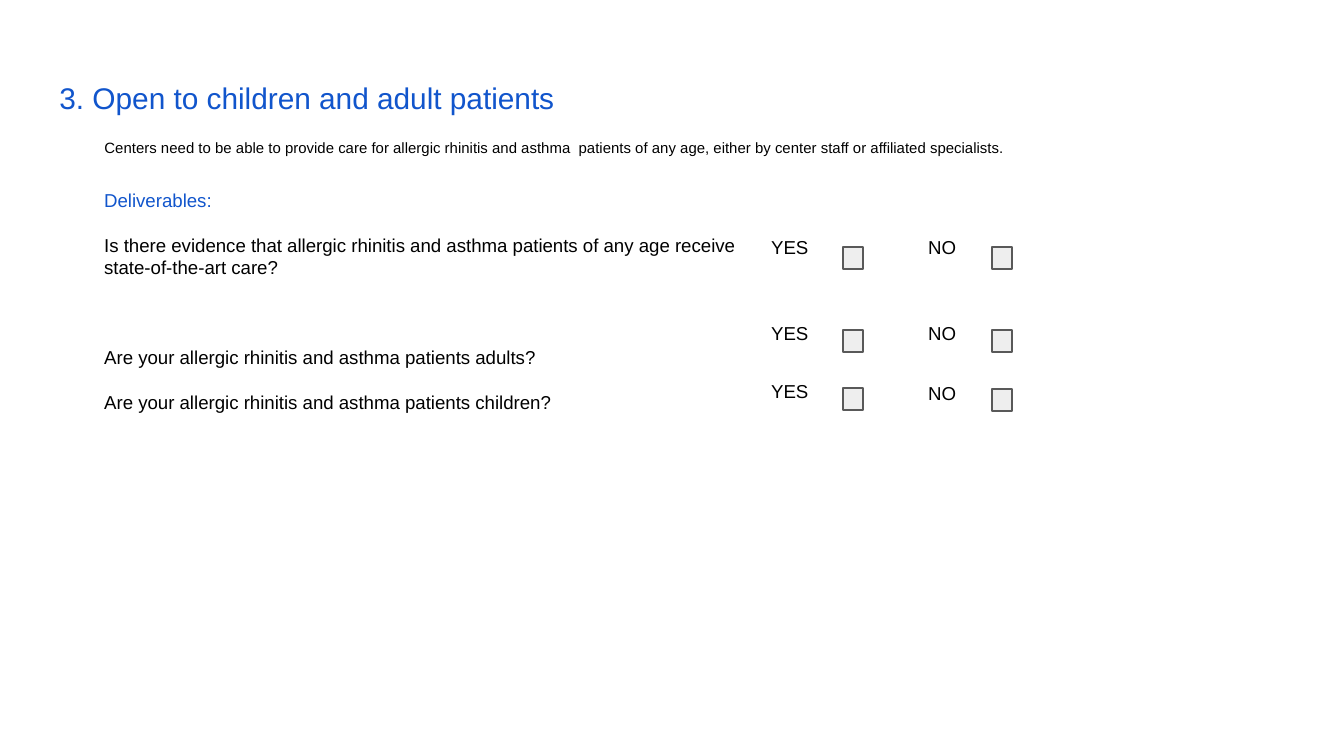
from pptx import Presentation
from pptx.dml.color import RGBColor
from pptx.enum.shapes import MSO_SHAPE
from pptx.enum.text import MSO_ANCHOR, PP_ALIGN
from pptx.oxml.xmlchemy import OxmlElement
from pptx.util import Pt

RECTANGLE = MSO_SHAPE.RECTANGLE
TOP = MSO_ANCHOR.TOP
LEFT = PP_ALIGN.LEFT

PX = 6804  # EMU per px
INSET = 91440
BLUE = RGBColor(0x11, 0x55, 0xCC)
BLACK = RGBColor(0x00, 0x00, 0x00)
BOX_FILL = RGBColor(0xEE, 0xEE, 0xEE)
BOX_LINE = RGBColor(0x59, 0x59, 0x59)

TITLE = "3. Open to children and adult patients"
INTRO = ("Centers need to be able to provide care for allergic rhinitis and asthma  "
         "patients of any age, either by center staff or affiliated specialists.")
HEADING = "Deliverables:"
CARE_QUESTION = [
    "Is there evidence that allergic rhinitis and asthma patients of any age receive",
    "state-of-the-art care?",
]
AGE_QUESTIONS = [
    "Are your allergic rhinitis and asthma patients adults?",
    "Are your allergic rhinitis and asthma patients children?",
]
# answer, label left, checkbox left, then (label top, checkbox top) for each row
ANSWERS = [
    ("YES", 758, 843, [(220, 247), (305, 330), (363, 388)]),
    ("NO", 915, 992, [(220, 247), (305, 330), (366, 389)]),
]
TEXT_LEFT = 91
LABEL_WIDTH, LABEL_HEIGHT = 68, 50
BOX_WIDTH, BOX_HEIGHT = 20, 22


def place(shape, left, top, width, height):
    shape.left, shape.top = left * PX, top * PX
    shape.width, shape.height = width * PX, height * PX


def write(shape, lines, size, color=BLACK, spacing=1.0, after=0):
    frame = shape.text_frame
    frame.text = "\n".join(lines)
    frame.word_wrap = True
    frame.vertical_anchor = TOP
    frame.margin_left = frame.margin_right = INSET
    frame.margin_top = frame.margin_bottom = INSET
    for para in frame.paragraphs:
        para.alignment = LEFT
        para.line_spacing = spacing
        para.space_before = Pt(0)
        para.space_after = Pt(after)
        for span in para.runs:
            span.font.name = "Arial"
            span.font.size = Pt(size)
            span.font.color.rgb = color


def remove_bullet(para):
    properties = para._p.get_or_add_pPr()
    properties.set("marL", "0")
    properties.set("indent", "0")
    properties.append(OxmlElement("a:buNone"))


def add_text(slide, area, lines, **style):
    box = slide.shapes.add_textbox(0, 0, 0, 0)
    place(box, *area)
    write(box, lines, 10, **style)


def add_checkbox(slide, left, top):
    box = slide.shapes.add_shape(RECTANGLE, 0, 0, 0, 0)
    place(box, left, top, BOX_WIDTH, BOX_HEIGHT)
    box.shadow.inherit = False
    box.fill.solid()
    box.fill.fore_color.rgb = BOX_FILL
    box.line.color.rgb = BOX_LINE
    box.line.width = Pt(0.75)


def main():
    deck = Presentation()
    deck.slide_width, deck.slide_height = 1344 * PX, 756 * PX
    slide = deck.slides.add_slide(deck.slide_layouts[1])

    title = slide.shapes.title
    place(title, 46, 66, 1253, 85)
    write(title, [TITLE], 16, BLUE)

    body = slide.placeholders[1]
    place(body, TEXT_LEFT, 122, 1253, 51)
    write(body, [INTRO], 8, spacing=1.15, after=12)
    remove_bullet(body.text_frame.paragraphs[0])

    add_text(slide, (TEXT_LEFT, 173, 227, LABEL_HEIGHT), [HEADING],
             color=BLUE, spacing=1.15, after=12)
    add_text(slide, (TEXT_LEFT, 220, 683, 73), CARE_QUESTION)
    add_text(slide, (TEXT_LEFT, 310, 632, 118), AGE_QUESTIONS, spacing=2.0)

    for answer, label_left, box_left, rows in ANSWERS:
        for label_top, box_top in rows:
            add_text(slide, (label_left, label_top, LABEL_WIDTH, LABEL_HEIGHT),
                     [answer], spacing=1.15, after=12)
            add_checkbox(slide, box_left, box_top)

    deck.save("out.pptx")


if __name__ == "__main__":
    main()
